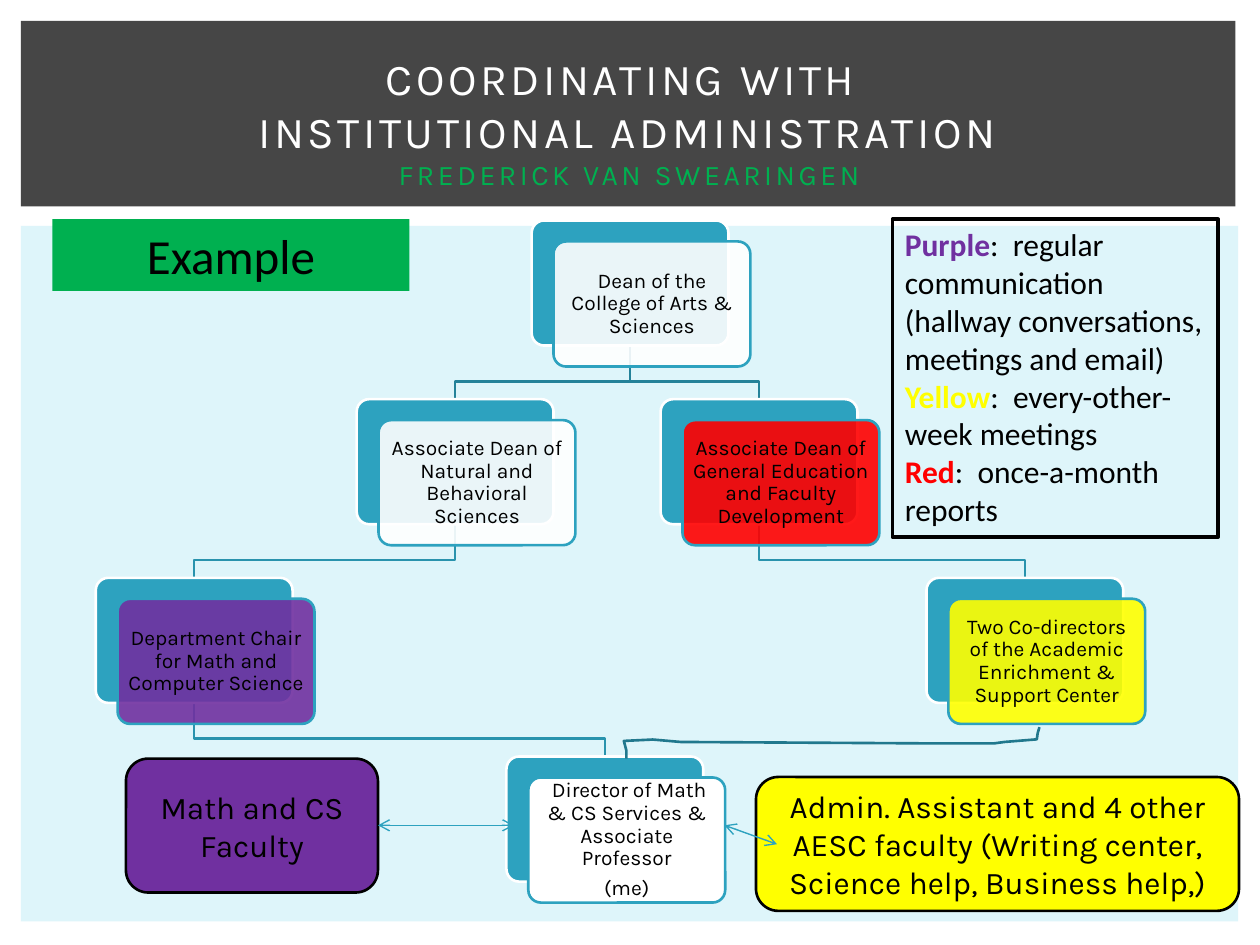
from lxml import etree
from pptx import Presentation
from pptx.dml.color import RGBColor
from pptx.enum import shapes, text
from pptx.oxml import ns
from pptx.util import Pt

WHITE = RGBColor(0xFF, 0xFF, 0xFF)
BLACK = RGBColor(0, 0, 0)
CHARCOAL = RGBColor(0x46, 0x46, 0x46)
PALE_BLUE = RGBColor(0xDE, 0xF5, 0xFA)
TEAL = RGBColor(0x2D, 0xA2, 0xBF)
UPPER_LINK = RGBColor(0x24, 0x82, 0x99)
LOWER_LINK = RGBColor(0x29, 0x93, 0xAD)
HAND_LINK = RGBColor(0x21, 0x78, 0x8D)
GREEN = RGBColor(0, 0xB0, 0x50)
PURPLE = RGBColor(0x70, 0x30, 0xA0)
YELLOW = RGBColor(0xFF, 0xFF, 0)
RED = RGBColor(0xFF, 0, 0)

RECT = shapes.MSO_SHAPE.RECTANGLE
ROUNDED = shapes.MSO_SHAPE.ROUNDED_RECTANGLE
CENTER, LEFT = text.PP_ALIGN.CENTER, text.PP_ALIGN.LEFT
MIDDLE, TOP = text.MSO_ANCHOR.MIDDLE, text.MSO_ANCHOR.TOP

CARD_W, CARD_H = 112.5, 71.5
SHIFT_X, SHIFT_Y = 12.5, 12
FIRST_ROW, ROW_STEP = 126, 102.1
BEND_RISE = 10.2

# name: (left, row, front colour, front opacity in %, paragraphs)
STAFF = {
    "dean": (303.8, 0, WHITE, 90, ["Dean of the College of Arts & Sciences"]),
    "sciences": (203.8, 1, WHITE, 90,
                 ["Associate Dean of Natural and Behavioral Sciences"]),
    "chair": (54.7, 2, PURPLE, 90,
              ["Department Chair for Math and Computer Science"]),
    "director": (289.4, 3, WHITE, 100,
                 [" Director of Math & CS Services & Associate Professor", "(me)"]),
    "education": (377.5, 1, RED, 90,
                  ["Associate Dean of General Education and Faculty Development"]),
    "codirectors": (529.4, 2, YELLOW, 90,
                    ["Two Co-directors of the Academic Enrichment & Support Center"]),
}
REPORTS = [("education", "codirectors", LOWER_LINK), ("dean", "education", UPPER_LINK),
           ("chair", "director", LOWER_LINK), ("sciences", "chair", LOWER_LINK),
           ("dean", "sciences", UPPER_LINK)]
HAND_DRAWN = [(594, 415.5), (593, 419), (592.5, 422.5), (574, 424), (568, 424.8),
              (533.5, 424.8), (389, 424), (373, 422.6), (356.5, 423.4),
              (358, 429), (358, 433.5)]
LEGEND = [("Purple", PURPLE, ":  regular communication (hallway conversations, "
                             "meetings and email)"),
          ("Yellow", YELLOW, ":  every-other- week meetings"),
          ("Red", RED, ":  once-a-month reports")]


def write(shape, paragraphs, font="Karla", size=18, color=BLACK, align=CENTER,
          anchor=MIDDLE, inset=None, leading=None, after=None, tracking=None):
    """Fill a shape; a paragraph is a string or a list of (string, font overrides)."""
    frame = shape.text_frame
    frame.word_wrap = True
    frame.auto_size = text.MSO_AUTO_SIZE.NONE
    frame.vertical_anchor = anchor
    if inset is not None:
        frame.margin_left = frame.margin_right = Pt(inset)
        frame.margin_top = frame.margin_bottom = Pt(inset)
    for number, runs in enumerate(paragraphs):
        paragraph = frame.add_paragraph() if number else frame.paragraphs[0]
        paragraph.alignment = align
        if leading:
            paragraph.line_spacing = leading
        if after:
            paragraph.space_after = Pt(after)
        for words, style in [(runs, {})] if isinstance(runs, str) else runs:
            for row, line in enumerate(words.split("\n")):
                if row:
                    paragraph.add_line_break()
                if not line:
                    continue
                run = paragraph.add_run()
                run.text = line
                run.font.name = font
                run.font.size = Pt(style.get("size", size))
                run.font.bold = style.get("bold", False)
                run.font.color.rgb = style.get("color", color)
                if tracking:
                    run.font._element.set("spc", str(tracking * 100))


def panel(slide, kind, box, fill=None, line=None, width=1.5, radius=None, opacity=100):
    shape = slide.shapes.add_shape(kind, *map(Pt, box))
    shape.shadow.inherit = False
    if radius is not None:
        shape.adjustments[0] = radius
    if fill is None:
        shape.fill.background()
    else:
        shape.fill.solid()
        shape.fill.fore_color.rgb = fill
    if opacity < 100:
        color = shape.fill._xPr.find(".//" + ns.qn("a:srgbClr"))
        etree.SubElement(color, ns.qn("a:alpha"), val=str(opacity * 1000))
    if line is None:
        shape.line.fill.background()
    else:
        shape.line.color.rgb = line
        shape.line.width = Pt(width)
    return shape


def polyline(slide, points, color):
    start, *rest = [(Pt(x), Pt(y)) for x, y in points]
    builder = slide.shapes.build_freeform(*start)
    builder.add_line_segments(rest, close=False)
    shape = builder.convert_to_shape()
    shape.shadow.inherit = False
    shape.fill.background()
    shape.line.color.rgb = color
    shape.line.width = Pt(1.5)


def double_arrow(slide, start, end):
    arrow = slide.shapes.add_connector(shapes.MSO_CONNECTOR.STRAIGHT,
                                       *map(Pt, start + end))
    arrow.line.color.rgb = TEAL
    arrow.line.width = Pt(0.79)
    for tip in ("a:headEnd", "a:tailEnd"):
        etree.SubElement(arrow.line._get_or_add_ln(), ns.qn(tip), type="arrow")
    etree.SubElement(arrow._element.spPr, ns.qn("a:effectLst"))


def header(slide, left, top, width, height):
    panel(slide, RECT, (left, top, width, height), CHARCOAL)
    title = slide.shapes.title
    title.left, title.top = Pt(left + 18), Pt(top + 16)
    title.width, title.height = Pt(width - 35), Pt(height - 23)
    write(title, [[("COORDINATING WITH \nINSTITUTIONAL ADMINISTRATION\n", {}),
                   ("FREDERICK VAN SWEARINGEN", {"size": 16.2, "color": GREEN})]],
          size=25.2, color=WHITE, tracking=2)
    slide.shapes._spTree.append(title._element)


def row_top(row):
    return FIRST_ROW + row * ROW_STEP


def report_line(slide, boss, report, color):
    """Elbow from the foot of the boss's back card to the top of the report's."""
    (boss_left, boss_row), (left, row) = STAFF[boss][:2], STAFF[report][:2]
    start_x, end_x = boss_left + CARD_W / 2, left + CARD_W / 2
    end_y = row_top(row)
    bend_y = end_y - BEND_RISE
    polyline(slide, [(start_x, row_top(boss_row) + CARD_H), (start_x, bend_y),
                     (end_x, bend_y), (end_x, end_y)], color)


def staff_card(slide, left, row, color, opacity, paragraphs):
    top = row_top(row)
    panel(slide, ROUNDED, (left, top, CARD_W, CARD_H), TEAL, WHITE, radius=0.1)
    front = panel(slide, ROUNDED, (left + SHIFT_X, top + SHIFT_Y, CARD_W, CARD_H),
                  color, TEAL, radius=0.1, opacity=opacity)
    write(front, paragraphs, size=12, inset=3.6, leading=0.9, after=4.2)


def org_chart(slide):
    for link in REPORTS:
        report_line(slide, *link)
    for person in STAFF.values():
        staff_card(slide, *person)
    polyline(slide, HAND_DRAWN, HAND_LINK)


def team(slide, box, color, members):
    write(panel(slide, ROUNDED, box, color, BLACK), [members])


def legend(slide, box):
    frame = panel(slide, RECT, box, line=BLACK, width=2.25)
    write(frame, [[(name, {"color": color, "bold": True}), (meaning, {})]
                  for name, color, meaning in LEGEND],
          font="Calibri", align=LEFT, anchor=TOP)


def main():
    deck = Presentation()
    deck.slide_width, deck.slide_height = Pt(720), Pt(540)
    slide = deck.slides.add_slide(deck.slide_layouts[5])
    panel(slide, RECT, (12, 129, 695.5, 397.5), PALE_BLUE)
    header(slide, 12, 12, 694, 106)
    org_chart(slide)
    team(slide, (72, 433.5, 144, 76.5), PURPLE, "Math and CS Faculty")
    team(slide, (432, 444, 276, 76.5), YELLOW,
         "Admin. Assistant and 4 other AESC faculty "
         "(Writing center, Science help, Business help,)")
    double_arrow(slide, (216, 471.6), (293.8, 471.6))
    double_arrow(slide, (414, 471.6), (444, 482.4))
    write(panel(slide, RECT, (30, 125.3, 204, 41), GREEN), ["Example"],
          font="Calibri", size=28, anchor=TOP)
    legend(slide, (510, 125.3, 186, 181.5))
    deck.save("out.pptx")


if __name__ == "__main__":
    main()
